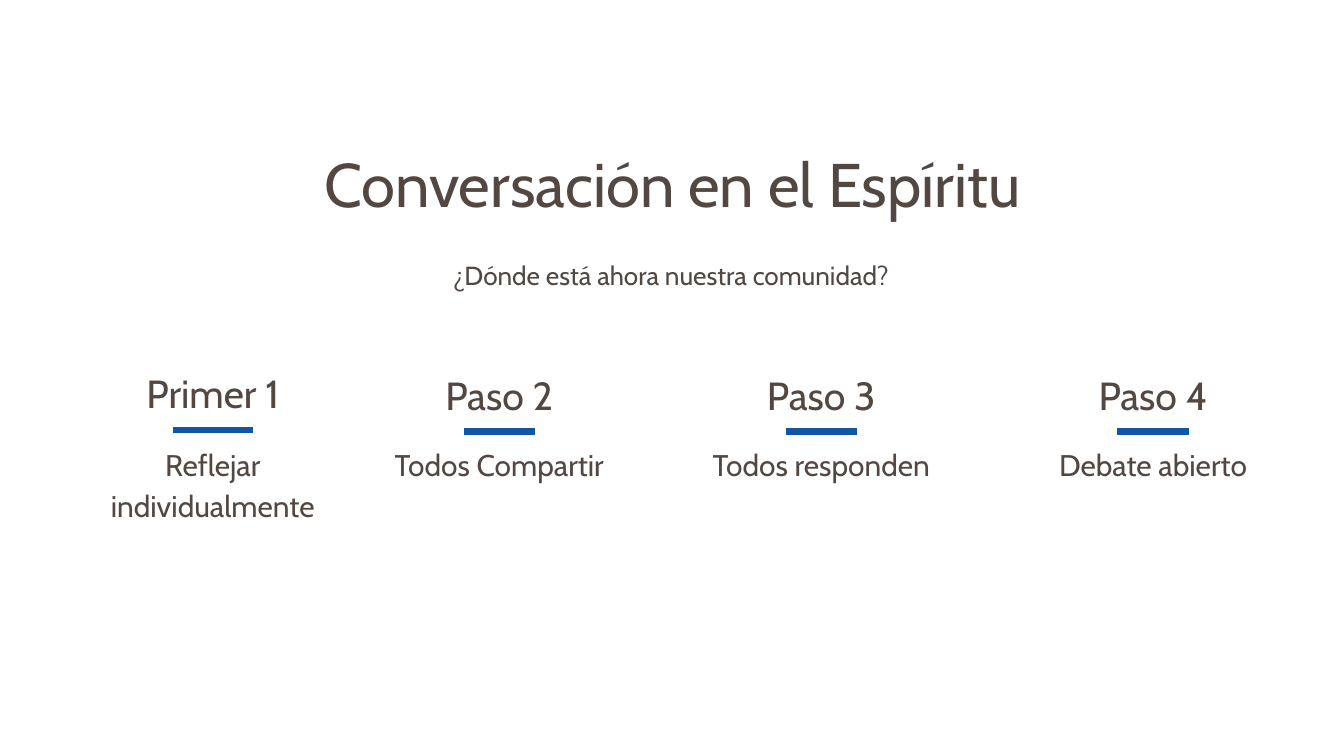
from dataclasses import dataclass

from lxml.etree import SubElement
from pptx import Presentation
from pptx.dml.color import RGBColor
from pptx.enum.shapes import MSO_CONNECTOR as Connector
from pptx.enum.text import MSO_ANCHOR as Anchor, MSO_AUTO_SIZE as AutoSize, PP_ALIGN as Align
from pptx.oxml.ns import qn
from pptx.shapes.autoshape import Shape
from pptx.shapes.shapetree import SlideShapes
from pptx.util import Pt

COLORS = {"background": "FFFFFF", "text": "534741", "rule": "0F57A5"}
FONT = "Cabin"
CAPTION_TOP = 473.8


@dataclass(frozen=True)
class TextStyle:
    size: float
    leading: float


@dataclass(frozen=True)
class Step:
    heading: str
    caption: str
    center: float
    heading_top: float = 405.2
    heading_width: float = 200
    heading_height: float = 43.2
    rule_y: float = 462.2
    rule_width: float = 76.4
    caption_width: float = 303
    caption_height: float = 42


TITLE = TextStyle(66, 67.2)
QUESTION = TextStyle(28, 31.5)
HEADING = TextStyle(42, 43.1)
CAPTION = TextStyle(32, 43.6)

STEPS = [
    Step("Primer 1", "Reflejar individualmente", 228, 402.5, 225.4, 44.6,
         460.8, 85.8, 326, 85.7),
    Step("Paso 2", "Todos Compartir", 535),
    Step("Paso 3", "Todos responden", 880),
    Step("Paso 4", "Debate abierto", 1235.5),
]


def write(box: Shape, text: str, style: TextStyle) -> None:
    frame = box.text_frame
    frame.text = text
    frame.word_wrap = True
    frame.auto_size = AutoSize.NONE
    frame.vertical_anchor = Anchor.TOP
    frame.margin_left = frame.margin_top = frame.margin_right = frame.margin_bottom = 0
    paragraph = frame.paragraphs[0]
    paragraph.alignment = Align.CENTER
    paragraph.line_spacing = Pt(style.leading)
    paragraph.space_before = Pt(0)
    paragraph.font.name = FONT
    paragraph.font.size = Pt(style.size)
    paragraph.font.color.rgb = RGBColor.from_string(COLORS["text"])


def place(box: Shape, left: float, top: float, width: float, height: float) -> None:
    box.left, box.top, box.width, box.height = Pt(left), Pt(top), Pt(width), Pt(height)


def draw_step(shapes: SlideShapes, step: Step) -> None:
    members = shapes.add_group_shape().shapes
    for text, style, top, width, height in (
        (step.heading, HEADING, step.heading_top, step.heading_width, step.heading_height),
        (step.caption, CAPTION, CAPTION_TOP, step.caption_width, step.caption_height),
    ):
        box = members.add_textbox(Pt(step.center - width / 2), Pt(top), Pt(width), Pt(height))
        write(box, text, style)
    half = step.rule_width / 2
    rule = members.add_connector(Connector.STRAIGHT, Pt(step.center - half), Pt(step.rule_y),
                                 Pt(step.center + half), Pt(step.rule_y))
    rule.line.color.rgb = RGBColor.from_string(COLORS["rule"])
    rule.line.width = Pt(6.92)
    SubElement(rule._element.spPr, qn("a:effectLst"))


def main() -> None:
    deck = Presentation()
    deck.slide_width, deck.slide_height = Pt(1440), Pt(810)
    slide = deck.slides.add_slide(deck.slide_layouts[0])
    background = slide.background.fill
    background.solid()
    background.fore_color.rgb = RGBColor.from_string(COLORS["background"])

    title, question = slide.placeholders
    place(title, 335.5, 168.5, 770.4, 68.4)
    write(title, "Conversación en el Espíritu", TITLE)
    place(question, 315.4, 280, 806.4, 32.4)
    write(question, "¿Dónde está ahora nuestra comunidad?", QUESTION)

    for step in STEPS:
        draw_step(slide.shapes, step)
    deck.save("out.pptx")


if __name__ == "__main__":
    main()
